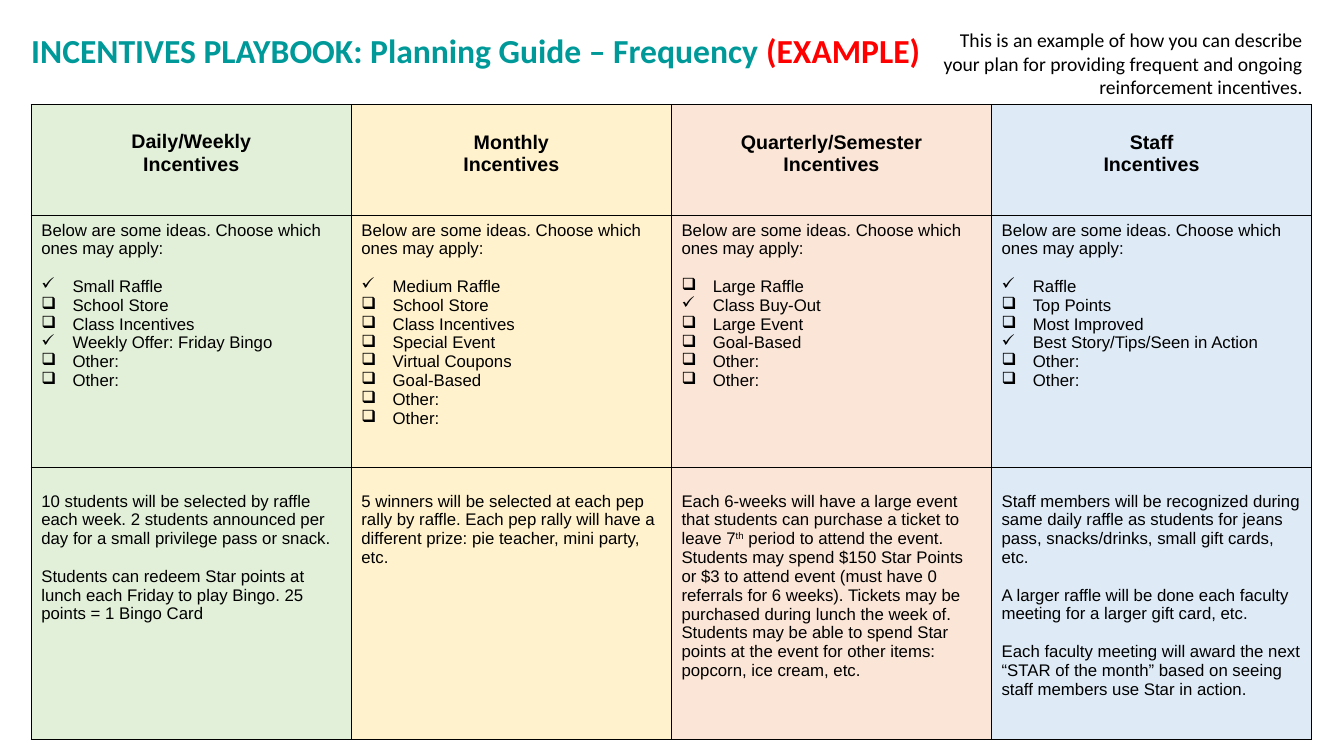
import pptx
import pptx.util
import pptx.dml.color
import pptx.enum.text
import pptx.oxml
import pptx.oxml.ns
from dataclasses import dataclass
from lxml import etree

Inches = pptx.util.Inches
Pt = pptx.util.Pt
Align = pptx.enum.text.PP_ALIGN
Anchor = pptx.enum.text.MSO_ANCHOR
qn = pptx.oxml.ns.qn


@dataclass
class Theme:
    heading_font: str = "Calibri"
    body_font: str = "Arial"
    teal: str = "009999"
    red: str = "FF0000"
    black: str = "000000"
    columns: tuple = ("E2F0D9", "FFF2CC", "FBE5D6", "DEEBF7")
    title_size: int = 24
    header_size: int = 14
    body_size: int = 12
    line_gap: float = 13.4


def rgb(color):
    return pptx.dml.color.RGBColor.from_string(color)


class PlaybookSlide:
    def __init__(self, presentation, theme):
        self.theme = theme
        self.slide = presentation.slides.add_slide(presentation.slide_layouts[5])

    def style(self, paragraph, font, size, color=None, bold=False, align=Align.LEFT):
        paragraph.alignment = align
        paragraph.font.name = font
        paragraph.font.size = Pt(size)
        paragraph.font.bold = bold
        if color:
            paragraph.font.color.rgb = rgb(color)

    def place(self, shape, left, top, width, height):
        shape.left, shape.top = Inches(left), Inches(top)
        shape.width, shape.height = Inches(width), Inches(height)

    def title(self, parts, box):
        shape = self.slide.shapes.title
        self.place(shape, *box)
        shape.text_frame.vertical_anchor = Anchor.TOP
        shape.text_frame.auto_size = pptx.enum.text.MSO_AUTO_SIZE.NONE
        paragraph = shape.text_frame.paragraphs[0]
        self.style(paragraph, self.theme.heading_font, self.theme.title_size, bold=True)
        for text, color in parts:
            run = paragraph.add_run()
            run.text = text
            run.font.color.rgb = rgb(color)

    def note(self, text, box):
        frame = self.slide.shapes.add_textbox(*map(Inches, box)).text_frame
        frame.word_wrap = True
        frame.text = text
        self.style(frame.paragraphs[0], self.theme.heading_font, self.theme.header_size,
                   self.theme.black, align=Align.RIGHT)

    def table(self, rows, box, heights):
        count = len(self.theme.columns)
        table = self.slide.shapes.add_table(len(rows), count, *map(Inches, box)).table
        table.first_row = table.horz_banding = False
        for row, height in zip(table.rows, heights):
            row.height = Inches(height)
        for row_index, (fill_cell, contents) in enumerate(rows):
            for column_index, content in enumerate(contents):
                cell = table.cell(row_index, column_index)
                self.border(cell)
                cell.fill.solid()
                cell.fill.fore_color.rgb = rgb(self.theme.columns[column_index])
                fill_cell(cell, content)
        return table

    def border(self, cell):
        properties = cell._tc.get_or_add_tcPr()
        for side in ("a:lnL", "a:lnR", "a:lnT", "a:lnB"):
            line = etree.SubElement(properties, qn(side), w=str(Pt(1)))
            fill = etree.SubElement(line, qn("a:solidFill"))
            etree.SubElement(fill, qn("a:srgbClr"), val=self.theme.black)

    def header(self, cell, text):
        cell.margin_top = Inches(0.27)
        cell.text = text
        for paragraph in cell.text_frame.paragraphs:
            self.style(paragraph, self.theme.body_font, self.theme.header_size,
                       self.theme.black, bold=True, align=Align.CENTER)

    def checklist(self, cell, items):
        cell.text = "\n".join([INTRO] + [item[2:] for item in items])
        paragraphs = cell.text_frame.paragraphs
        paragraphs[1].space_before = Pt(self.theme.line_gap)
        for paragraph, item in zip(paragraphs[1:], items):
            properties = paragraph._p.get_or_add_pPr()
            properties.set("marL", str(Inches(0.31)))
            properties.set("indent", str(Inches(-0.31)))
            etree.SubElement(properties, qn("a:buChar"), char=item[0])
        self.body(paragraphs)

    def plan(self, cell, texts):
        """A ^ pair encloses superscript text."""
        cell.margin_top = Inches(0.24)
        cell.text = "\n" * (len(texts) - 1)
        paragraphs = cell.text_frame.paragraphs
        for paragraph, text in zip(paragraphs, texts):
            for index, part in enumerate(text.split("^")):
                run = paragraph.add_run()
                run.text = part
                if index % 2:
                    run._r.get_or_add_rPr().set("baseline", "30000")
        for paragraph in paragraphs[1:]:
            paragraph.space_before = Pt(self.theme.line_gap)
        self.body(paragraphs)

    def body(self, paragraphs):
        for paragraph in paragraphs:
            self.style(paragraph, self.theme.body_font, self.theme.body_size, self.theme.black)


INTRO = "Below are some ideas. Choose which ones may apply:"
HEADERS = [f"{period}\nIncentives"
           for period in ("Daily/Weekly", "Monthly", "Quarterly/Semester", "Staff")]
OTHERS = ["❑ Other:"] * 2
IDEAS = [
    ["✓ Small Raffle", "❑ School Store", "❑ Class Incentives",
     "✓ Weekly Offer: Friday Bingo"] + OTHERS,
    ["✓ Medium Raffle", "❑ School Store", "❑ Class Incentives", "❑ Special Event",
     "❑ Virtual Coupons", "❑ Goal-Based"] + OTHERS,
    ["❑ Large Raffle", "✓ Class Buy-Out", "❑ Large Event", "❑ Goal-Based"] + OTHERS,
    ["✓ Raffle", "❑ Top Points", "❑ Most Improved",
     "✓ Best Story/Tips/Seen in Action"] + OTHERS,
]
PLANS = [
    ["10 students will be selected by raffle each week. 2 students announced per day "
     "for a small privilege pass or snack.",
     "Students can redeem Star points at lunch each Friday to play Bingo. "
     "25 points = 1 Bingo Card"],
    ["5 winners will be selected at each pep rally by raffle. Each pep rally will have "
     "a different prize: pie teacher, mini party, etc."],
    ["Each 6-weeks will have a large event that students can purchase a ticket to leave "
     "7^th^ period to attend the event. Students may spend $150 Star Points or $3 to "
     "attend event (must have 0 referrals for 6 weeks). Tickets may be purchased during "
     "lunch the week of. Students may be able to spend Star points at the event for "
     "other items: popcorn, ice cream, etc."],
    ["Staff members will be recognized during same daily raffle as students for jeans "
     "pass, snacks/drinks, small gift cards, etc.",
     "A larger raffle will be done each faculty meeting for a larger gift card, etc.",
     "Each faculty meeting will award the next “STAR of the month” based on seeing "
     "staff members use Star in action."],
]


def main():
    presentation = pptx.Presentation()
    presentation.slide_width, presentation.slide_height = Inches(13.33), Inches(7.5)
    theme = Theme()
    playbook = PlaybookSlide(presentation, theme)

    # Title and explanatory note
    playbook.title([("INCENTIVES PLAYBOOK: Planning Guide – Frequency ", theme.teal),
                    ("(EXAMPLE)", theme.red)], (0.21, 0.25, 12.81, 0.81))

    # Incentives by frequency
    rows = [(playbook.header, HEADERS), (playbook.checklist, IDEAS), (playbook.plan, PLANS)]
    table = playbook.table(rows, (0.31, 1.04, 12.7, 6.3), (1.1, 2.5, 2.7))

    # The first heading sits a little higher, with looser lines
    first_header = table.cell(0, 0)
    first_header.margin_top = Inches(0.24)
    for paragraph in first_header.text_frame.paragraphs:
        paragraph.line_spacing = 1.07

    playbook.note("This is an example of how you can describe your plan for providing "
                  "frequent and ongoing reinforcement incentives.", (9.05, 0.23, 3.97, 0.81))
    presentation.save("out.pptx")


if __name__ == "__main__":
    main()
